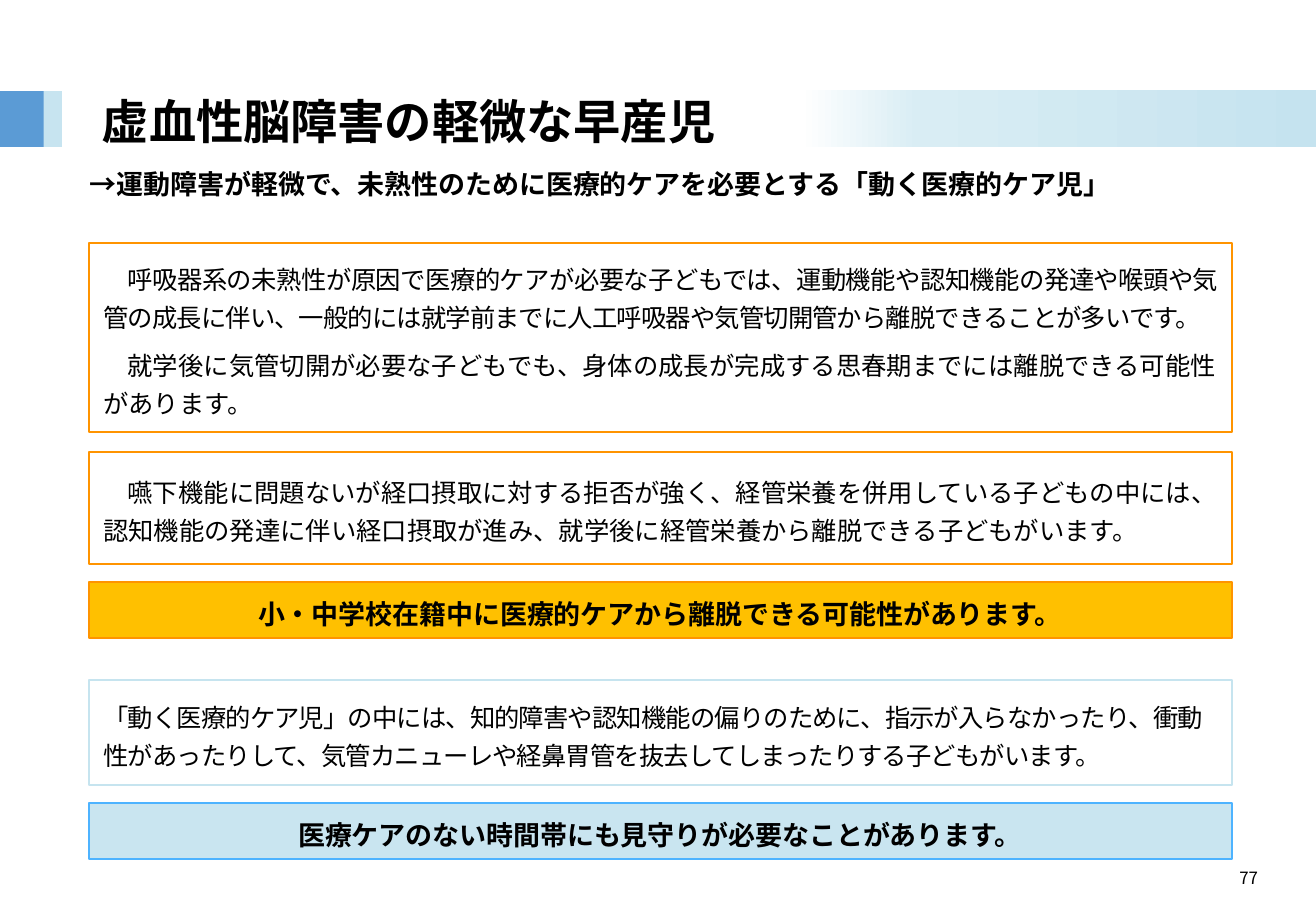
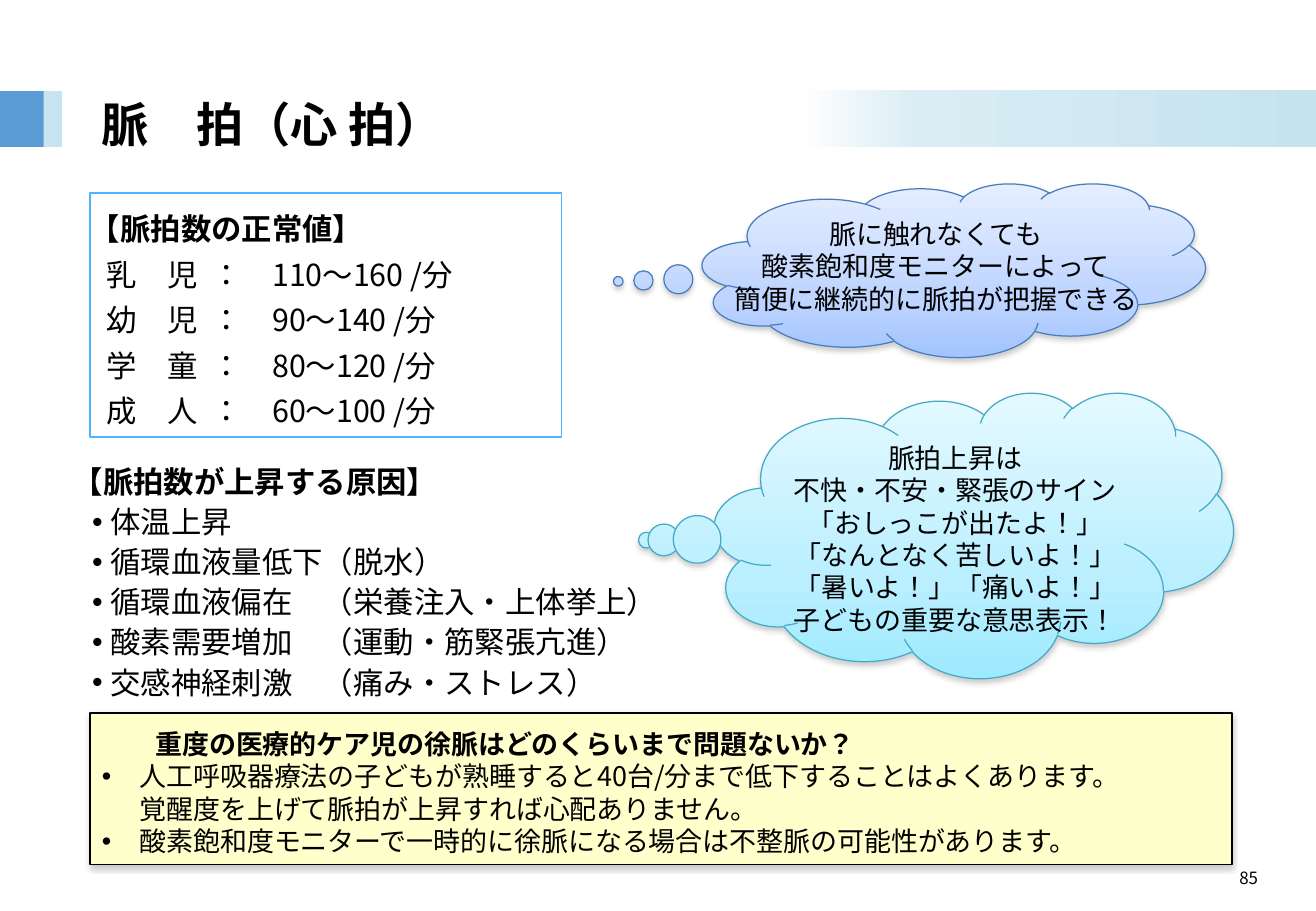
from lxml import etree
from pptx import Presentation
from pptx.dml.color import RGBColor
from pptx.enum.lang import MSO_LANGUAGE_ID
from pptx.enum.shapes import MSO_SHAPE
from pptx.enum.text import MSO_ANCHOR, MSO_AUTO_SIZE, PP_ALIGN
from pptx.oxml.ns import qn
from pptx.util import Inches, Pt

RECT, CLOUD = MSO_SHAPE.RECTANGLE, MSO_SHAPE.CLOUD_CALLOUT
TOP, MIDDLE = MSO_ANCHOR.TOP, MSO_ANCHOR.MIDDLE
LEFT, CENTER, JUSTIFY = PP_ALIGN.LEFT, PP_ALIGN.CENTER, PP_ALIGN.JUSTIFY
GROW, FIXED = MSO_AUTO_SIZE.SHAPE_TO_FIT_TEXT, MSO_AUTO_SIZE.NONE
JAPANESE = MSO_LANGUAGE_ID.JAPANESE

FONT = "Noto Sans CJK JP"
BLACK = RGBColor(0x00, 0x00, 0x00)
WHITE = RGBColor(0xFF, 0xFF, 0xFF)
BLUE = RGBColor(0x5B, 0x9B, 0xD5)
PALE_BLUE = RGBColor(0xC7, 0xE4, 0xF0)
SKY = RGBColor(0x4D, 0xB3, 0xFF)
ICE = RGBColor(0xC9, 0xE5, 0xF0)
ICE_LINE = RGBColor(0xC6, 0xE4, 0xEF)
ORANGE = RGBColor(0xFF, 0x94, 0x00)
AMBER = RGBColor(0xFF, 0xC0, 0x00)
CREAM = RGBColor(0xFF, 0xFF, 0xCC)
TEAL_LINE = RGBColor(0x46, 0xAA, 0xC5)
NAVY_LINE = RGBColor(0x4A, 0x7E, 0xBB)
SHADOW = RGBColor(0x80, 0x80, 0x80)
BAND_FADE = [(0, WHITE), (23, RGBColor(0xD9, 0xED, 0xF4)), (100, RGBColor(0xC5, 0xE3, 0xEF))]
TEAL_FADE = [(0, RGBColor(0xE4, 0xF9, 0xFF)), (65, RGBColor(0xBB, 0xEF, 0xFF)),
             (100, RGBColor(0x9E, 0xEA, 0xFF))]
NAVY_FADE = [(0, RGBColor(0xE5, 0xEE, 0xFF)), (65, RGBColor(0xBF, 0xD5, 0xFF)),
             (100, RGBColor(0xA3, 0xC4, 0xFF))]


def add_panel(slide, box, fill=None, line=None, width=0.75, kind=RECT, angle=0, shadow=False):
    panel = slide.shapes.add_shape(kind, *map(Inches, box))
    panel.shadow.inherit = False
    if fill is None:
        panel.fill.background()
    elif isinstance(fill, list):
        panel.fill.gradient()
        panel.fill.gradient_angle = -angle % 360
        stops = panel._element.spPr.find(".//" + qn("a:gsLst"))
        for stop in list(stops):
            stops.remove(stop)
        for position, color in fill:
            stop = etree.SubElement(stops, qn("a:gs"), pos=str(position * 1000))
            etree.SubElement(stop, qn("a:srgbClr"), val=str(color))
    else:
        panel.fill.solid()
        panel.fill.fore_color.rgb = fill
    if line is None:
        panel.line.fill.background()
    else:
        panel.line.color.rgb = line
        panel.line.width = Pt(width)
    if shadow:
        effects = panel._element.spPr.find(qn("a:effectLst"))
        outer = etree.SubElement(effects, qn("a:outerShdw"), blurRad=str(Pt(3.1)),
                                 dist=str(Pt(1.6)), dir="5400000", rotWithShape="0")
        color = etree.SubElement(outer, qn("a:srgbClr"), val=str(SHADOW))
        etree.SubElement(color, qn("a:alpha"), val="38000")
    return panel


def write(shape, texts, size, bold=False, heading=False, align=LEFT, spacing=None, after=None,
          insets=(0.1, 0.05, 0.1, 0.05), anchor=TOP, wrap=True, fit=FIXED, tracking=()):
    frame = shape.text_frame
    frame.word_wrap, frame.auto_size, frame.vertical_anchor = wrap, fit, anchor
    (frame.margin_left, frame.margin_top,
     frame.margin_right, frame.margin_bottom) = map(Inches, insets)
    for index, text in enumerate(texts):
        paragraph = frame.add_paragraph() if index else frame.paragraphs[0]
        paragraph.alignment = align
        if spacing:
            paragraph.line_spacing = spacing
        if after:
            paragraph.space_after = Pt(after)
        for part, words in enumerate(text.split("\n")):
            if part:
                paragraph.add_line_break()
            run = paragraph.add_run()
            run.text = words
            run.font.size, run.font.name = Pt(size), FONT
            run.font.bold = bold or (heading and index == 0)
            run.font.color.rgb = BLACK
            run.font.language_id = JAPANESE
            properties = run._r.get_or_add_rPr()
            etree.SubElement(properties, qn("a:ea"), typeface=FONT)
            if index in tracking:
                properties.set("spc", "-50")
    return frame.paragraphs


deck = Presentation()
deck.slide_width, deck.slide_height = Inches(10.83), Inches(7.5)

slides = []
for title, title_spacing, number in [("虚血性脳障害の軽微な早産児", 0.9, "77"),
                                     ("脈\u3000拍（心 拍）".replace("\u3000", "　"), 1.0, "85")]:
    slide = deck.slides.add_slide(deck.slide_layouts[6])
    add_panel(slide, (0, 0.75, 0.38, 0.46), BLUE)
    add_panel(slide, (0.36, 0.75, 0.15, 0.46), PALE_BLUE)
    add_panel(slide, (6.58, 0.74, 4.25, 0.47), BAND_FADE)
    title_box = slide.shapes.add_textbox(*map(Inches, (0.74, 0.7, 9.34, 0.64)))
    write(title_box, [title], 28, bold=True, spacing=title_spacing, anchor=MIDDLE)
    page_number = slide.shapes.add_textbox(*map(Inches, (10.1, 7.09, 0.38, 0.27)))
    write(page_number, [number], 10, wrap=False, fit=GROW)
    slides.append(slide)
preterm, pulse = slides

subtitle = preterm.shapes.add_textbox(*map(Inches, (0.74, 1.38, 9.53, 0.34)))
write(subtitle, ["→運動障害が軽微で、未熟性のために医療的ケアを必要とする「動く医療的ケア児」"],
      16, bold=True, insets=(0, 0, 0, 0))

breathing = [
    "呼吸器系の未熟性が原因で医療的ケアが必要な子どもでは、運動機能や認知機能の発達や喉頭や気管の成長に伴い、一般的には就学前までに人工呼吸器や気管切開管から離脱できることが多いです。",
    "就学後に気管切開が必要な子どもでも、身体の成長が完成する思春期までには離脱できる可能性があります。",
]
swallowing = ["嚥下機能に問題ないが経口摂取に対する拒否が強く、経管栄養を併用している子どもの中には、認知機能の発達に伴い経口摂取が進み、就学後に経管栄養から離脱できる子どもがいます。"]
behaviour = ["「動く医療的ケア児」の中には、知的障害や認知機能の偏りのために、指示が入らなかったり、衝動性があったりして、気管カニューレや経鼻胃管を抜去してしまったりする子どもがいます。"]
weaning = ["小・中学校在籍中に医療的ケアから離脱できる可能性があります。"]
watching = ["医療ケアのない時間帯にも見守りが必要なことがあります。"]

for top, height, fill, line, texts, size, align, first_indent, tracking in [
    (2, 1.56, WHITE, ORANGE, breathing, 15, JUSTIFY, 0.2, (0,)),
    (3.72, 0.92, WHITE, ORANGE, swallowing, 15, JUSTIFY, 0.2, ()),
    (4.79, 0.46, AMBER, ORANGE, weaning, 16, CENTER, 0, ()),
    (5.6, 0.86, WHITE, ICE_LINE, behaviour, 15, LEFT, 0, (0,)),
    (6.61, 0.46, ICE, SKY, watching, 16, CENTER, 0, ()),
]:
    panel = add_panel(preterm, (0.73, top, 9.41, height), fill, line, 1.25)
    for paragraph in write(panel, texts, size, bold=align == CENTER, align=align, spacing=1.25,
                           after=6, insets=(0.12, 0.08, 0.12, 0.08), anchor=MIDDLE,
                           tracking=tracking):
        paragraph._p.get_or_add_pPr().set("indent", str(Inches(first_indent)))

causes_box = pulse.shapes.add_textbox(*map(Inches, (0.5, 3.69, 5.06, 2.15)))
causes = write(causes_box, [
    "【脈拍数が上昇する原因】",
    "体温上昇",
    "循環血液量低下（脱水）",
    "循環血液偏在　（栄養注入・上体挙上）",
    "酸素需要増加　（運動・筋緊張亢進）",
    "交感神経刺激　（痛み・ストレス）",
], 18, heading=True, spacing=1.1, wrap=False, fit=GROW)
causes[0].line_spacing = 1.25

for box, tail, fill, line, anchor, texts in [
    ((5.88, 3.23, 4.27, 2.35), (-0.631, 0.018), TEAL_FADE, TEAL_LINE, TOP,
     ["脈拍上昇は", "不快・不安・緊張のサイン", "「おしっこが出たよ！」",
      "「なんとなく苦しいよ！」", "「暑いよ！」「痛いよ！」", "子どもの重要な意思表示！"]),
    ((5.78, 1.51, 4.14, 1.43), (-0.667, 0.064), NAVY_FADE, NAVY_LINE, MIDDLE,
     ["脈に触れなくても", "酸素飽和度モニターによって", "簡便に継続的に脈拍が把握できる"]),
]:
    cloud = add_panel(pulse, box, fill, line, kind=CLOUD, angle=90, shadow=True)
    cloud.adjustments[0], cloud.adjustments[1] = tail
    write(cloud, texts, 16, align=CENTER, anchor=anchor, wrap=False)

bradycardia_box = add_panel(pulse, (0.74, 5.87, 9.4, 1.25), CREAM, BLACK, shadow=True)
bradycardia = write(bradycardia_box, [
    "重度の医療的ケア児の徐脈はどのくらいまで問題ないか？",
    "人工呼吸器療法の子どもが熟睡すると40台/分まで低下することはよくあります。\n覚醒度を上げて脈拍が上昇すれば心配ありません。",
    "酸素飽和度モニターで一時的に徐脈になる場合は不整脈の可能性があります。",
], 16, heading=True, insets=(0.1, 0.12, 0.1, 0.05), fit=GROW)
bradycardia[0]._p.get_or_add_pPr().set("marL", str(Inches(0.44)))

for items, hanging in [(causes[1:], 0.15), (bradycardia[1:], 0.31)]:
    for item in items:
        properties = item._p.get_or_add_pPr()
        properties.set("marL", str(Inches(0.31)))
        properties.set("indent", str(-Inches(hanging)))
        etree.SubElement(properties, qn("a:buFont"), typeface="Arial")
        etree.SubElement(properties, qn("a:buChar"), char="•")

rates = [("乳　児", "110〜160"), ("幼　児", "90〜140"), ("学　童", "80〜120"), ("成　人", "60〜100")]
normal_box = add_panel(pulse, (0.74, 1.59, 3.88, 2.01), None, SKY, 1)
normal = write(normal_box,
               ["【脈拍数の正常値】"] + [f"{age}\t：\t{rate} /分" for age, rate in rates],
               18, heading=True, spacing=1.25, insets=(0, 0.05, 0.1, 0.05), anchor=MIDDLE)
for row in normal[1:]:
    properties = row._p.get_or_add_pPr()
    properties.set("indent", str(Inches(0.14)))
    stops = etree.SubElement(properties, qn("a:tabLst"))
    for position in (0.98, 2):
        etree.SubElement(stops, qn("a:tab"), pos=str(Inches(position)), algn="l")

deck.save("out.pptx")
